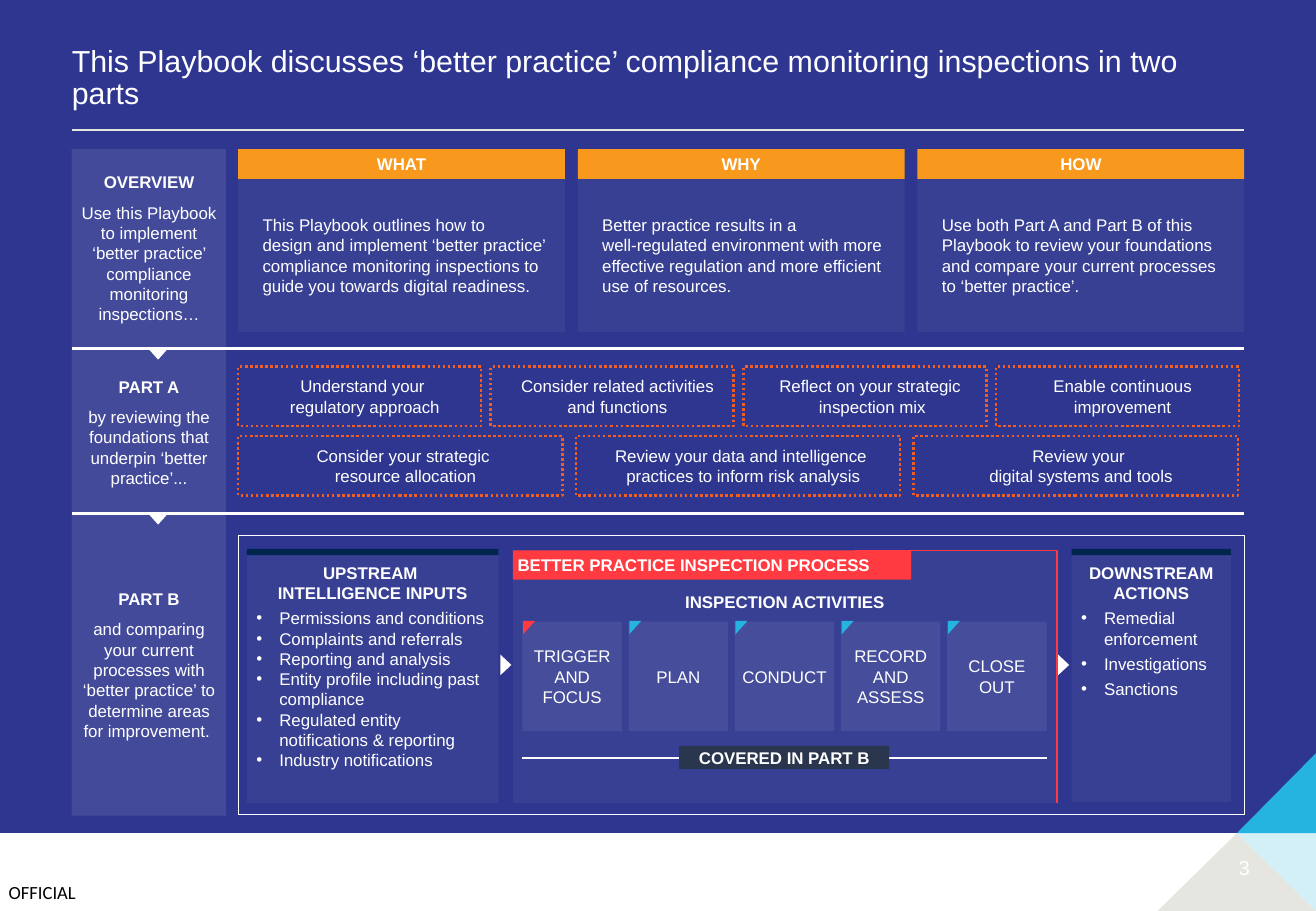
from copy import deepcopy
from dataclasses import dataclass

from lxml import etree
from pptx import Presentation
from pptx.dml.color import RGBColor
from pptx.enum.dml import MSO_LINE
from pptx.enum.shapes import MSO_CONNECTOR, MSO_SHAPE
from pptx.enum.text import MSO_ANCHOR, MSO_AUTO_SIZE, PP_ALIGN
from pptx.oxml.ns import qn
from pptx.util import Cm, Pt

RECTANGLE, TRIANGLE, CORNER = MSO_SHAPE.RECTANGLE, MSO_SHAPE.ISOSCELES_TRIANGLE, MSO_SHAPE.RIGHT_TRIANGLE
STRAIGHT, DOTTED = MSO_CONNECTOR.STRAIGHT, MSO_LINE.ROUND_DOT
LEFT, CENTER, RIGHT = PP_ALIGN.LEFT, PP_ALIGN.CENTER, PP_ALIGN.RIGHT
TOP, MIDDLE, BOTTOM = MSO_ANCHOR.TOP, MSO_ANCHOR.MIDDLE, MSO_ANCHOR.BOTTOM

WHITE, NAVY, ORANGE, RED, CYAN = "FFFFFF", "2E368F", "F8981D", "FF3A40", "25B3E0"
DOT_ORANGE, DARK_BLUE, SLATE, GREY, PALE_BLUE = "F25E21", "00264D", "2A354E", "E6E6E1", "D3F0F9"

SLIDE_WIDTH, SLIDE_HEIGHT, NAVY_HEIGHT = 27.51, 19.05, 17.42
MARGIN, RIGHT_EDGE, CONTENT_LEFT = 1.5, 26.01, 4.98
WIDE_INSETS = (0.51, 0.13, 0.3, 0.13)
SIDE_INSETS = (0.2, 0.13, 0.2, 0.13)
LIST_INSETS = (0.2, 0.15, 0.2, 0.13)
TIGHT_INSETS = (0.1, 0.1, 0.1, 0.1)


@dataclass
class Box:
    left: float
    top: float
    width: float
    height: float

    def lengths(self) -> tuple:
        return Cm(self.left), Cm(self.top), Cm(self.width), Cm(self.height)


@dataclass
class Section:
    heading: str
    text: str
    top: float
    height: float


@dataclass
class ListPanel:
    placeholder: int
    heading: str
    items: list[str]
    box: Box
    item_space: float


CARDS = [
    ("WHAT", "This Playbook outlines how to \ndesign and implement ‘better practice’ compliance monitoring "
             "inspections to guide you towards digital readiness."),
    ("WHY", "Better practice results in a \nwell-regulated environment with more effective regulation "
            "and more efficient use of resources."),
    ("HOW", "Use both Part A and Part B of this Playbook to review your foundations and compare your "
            "current processes to ‘better practice’."),
]
SECTIONS = [
    Section("OVERVIEW", "Use this Playbook to implement ‘better practice’ compliance monitoring inspections…", 3.12, 4.14),
    Section("PART A", "by reviewing the foundations that underpin ‘better practice’...", 7.32, 3.43),
    Section("PART B", "and comparing your current processes with ‘better practice’ to determine areas "
                      "for improvement. ", 10.74, 6.32),
]
FOUR_FOUNDATIONS = ["Understand your \nregulatory approach", "Consider related activities and functions",
                    "Reflect on your strategic\n inspection mix", "Enable continuous improvement"]
THREE_FOUNDATIONS = ["Consider your strategic \nresource allocation",
                     "Review your data and intelligence \npractices to inform risk analysis",
                     "Review your \ndigital systems and tools"]
STEPS = ["TRIGGER AND FOCUS", "PLAN", "CONDUCT", "RECORD AND ASSESS", "CLOSE OUT"]
LIST_PANELS = [
    ListPanel(1, "UPSTREAM \nINTELLIGENCE INPUTS",
              ["Permissions and conditions", "Complaints and referrals", "Reporting and analysis",
               "Entity profile including past compliance", "Regulated entity notifications & reporting",
               "Industry notifications"], Box(5.16, 11.61, 5.26, 5.18), 0),
    ListPanel(2, "DOWNSTREAM ACTIONS", ["Remedial enforcement", "Investigations", "Sanctions"],
              Box(22.4, 11.61, 3.33, 5.16), 3),
]


def color(value: str) -> RGBColor:
    return RGBColor.from_string(value)


def paint(shape, fill: str | None, line: str | None = None, weight: float = 1, opacity: int = 100) -> None:
    shape.shadow.inherit = False
    if fill:
        shape.fill.solid()
        shape.fill.fore_color.rgb = color(fill)
        if opacity < 100:
            tint = shape.fill._xPr.find(".//" + qn("a:srgbClr"))
            etree.SubElement(tint, qn("a:alpha"), val=str(opacity * 1000))
    else:
        shape.fill.background()
    if line:
        shape.line.color.rgb = color(line)
        shape.line.width = Pt(weight)
    else:
        shape.line.fill.background()


def add_shape(box: Box, fill: str | None, kind=RECTANGLE, rotation: int = 0, **style):
    shape = slide.shapes.add_shape(kind, *box.lengths())
    shape.rotation = rotation
    paint(shape, fill, **style)
    return shape


def add_line(left: float, right: float, y: float, line: str, weight: float) -> None:
    connector = slide.shapes.add_connector(STRAIGHT, Cm(left), Cm(y), Cm(right), Cm(y))
    connector.line.color.rgb = color(line)
    connector.line.width = Pt(weight)
    etree.SubElement(connector._element.spPr, qn("a:effectLst"))


def add_outline(points: list[tuple[float, float]], closed: bool, fill: str | None, line: str | None = None) -> None:
    start, *others = [(Cm(x), Cm(y)) for x, y in points]
    builder = slide.shapes.build_freeform(*start)
    builder.add_line_segments(others, close=closed)
    paint(builder.convert_to_shape(), fill, line)


def format_frame(shape, anchor=MIDDLE, insets=TIGHT_INSETS, wrap=True, fit=MSO_AUTO_SIZE.NONE) -> None:
    frame = shape.text_frame
    frame.word_wrap, frame.auto_size, frame.vertical_anchor = wrap, fit, anchor
    frame.margin_left, frame.margin_top, frame.margin_right, frame.margin_bottom = map(Cm, insets)


def write(shape, text: str, *, size: float = 10, font: str = "Arial", ink: str = WHITE, bold: bool = False,
          align=CENTER, after: float = 0, spacing: float = 1, bullet: bool = False) -> None:
    """Add one formatted paragraph, filling the empty first one if there is one."""
    frame = shape.text_frame
    paragraph = frame.add_paragraph() if frame.text else frame.paragraphs[0]
    paragraph.text = text
    paragraph.alignment, paragraph.line_spacing = align, spacing
    paragraph.space_before, paragraph.space_after = Pt(0), Pt(after)
    properties = paragraph._p.get_or_add_pPr()
    indent = Cm(0.48) if bullet else 0
    properties.set("marL", str(indent))
    properties.set("indent", str(-indent))
    if bullet:
        bullet_color = etree.SubElement(properties, qn("a:buClr"))
        etree.SubElement(bullet_color, qn("a:srgbClr"), val=WHITE)
        etree.SubElement(properties, qn("a:buFont"), typeface="Arial")
        etree.SubElement(properties, qn("a:buChar"), char="•")
    else:
        etree.SubElement(properties, qn("a:buNone"))
    for run in paragraph.runs:
        run.font.size, run.font.name, run.font.bold = Pt(size), font, bold
        run.font.color.rgb = color(ink)
    for line_break in paragraph._p.findall(qn("a:br")):
        line_break.insert(0, deepcopy(paragraph.runs[0]._r.rPr))


def add_label(box: Box, text: str, fill: str | None, insets=TIGHT_INSETS, opacity: int = 100, **text_format):
    shape = add_shape(box, fill, opacity=opacity)
    format_frame(shape, insets=insets)
    write(shape, text, **text_format)
    return shape


def place_placeholder(index: int, box: Box):
    """Move a placeholder to the box and in front of what is already drawn."""
    placeholder = slide.placeholders[index]
    placeholder.left, placeholder.top, placeholder.width, placeholder.height = box.lengths()
    slide.shapes._spTree.append(placeholder._element)
    return placeholder


def add_text(box: Box, text: str, **text_format) -> None:
    text_box = slide.shapes.add_textbox(*box.lengths())
    format_frame(text_box, insets=(0, 0, 0, 0), wrap=False)
    write(text_box, text, **text_format)


def add_foundations(texts: list[str], top: float, width: float, gap: float) -> None:
    for column, text in enumerate(texts):
        box = Box(CONTENT_LEFT + column * (width + gap), top, width, 1.24)
        shape = add_label(box, text, None, WIDE_INSETS)
        paint(shape, None, DOT_ORANGE, 1.5)
        shape.line.dash_style = DOTTED


presentation = Presentation()
presentation.slide_width, presentation.slide_height = Cm(SLIDE_WIDTH), Cm(SLIDE_HEIGHT)
slide = presentation.slides.add_slide(presentation.slide_layouts[3])

add_shape(Box(0, 0, SLIDE_WIDTH, NAVY_HEIGHT), NAVY)
add_line(MARGIN, RIGHT_EDGE, 2.72, GREY, 1.25)
peak, edge = (25.86, NAVY_HEIGHT), (SLIDE_WIDTH, NAVY_HEIGHT)
bottom_corner = (SLIDE_WIDTH, SLIDE_HEIGHT)
add_outline([peak, (24.2, SLIDE_HEIGHT), bottom_corner], True, GREY)
add_outline([edge, peak, bottom_corner], True, PALE_BLUE)
add_outline([(SLIDE_WIDTH, 15.75), peak, edge], True, CYAN)
add_text(Box(0.18, 18.42, 1.5, 0.46), "OFFICIAL", size=11, font="Calibri", ink="000000", align=LEFT)
add_text(Box(25.13, 17.9, 1, 0.5), "3", size=12, align=RIGHT)

title = place_placeholder(0, Box(MARGIN, 1.52, 24.51, 0.94))
format_frame(title, BOTTOM, (0, 0.13, 0, 0.13), fit=MSO_AUTO_SIZE.SHAPE_TO_FIT_TEXT)
write(title, "This Playbook discusses ‘better practice’ compliance monitoring inspections in two parts",
      size=18, align=LEFT, spacing=0.9)

for y in (7.29, 10.74):
    add_line(MARGIN, RIGHT_EDGE, y, WHITE, 1.5)
    add_shape(Box(3.1, y, 0.41, 0.23), WHITE, TRIANGLE, 180)

for column, (heading, text) in enumerate(CARDS):
    left = CONTENT_LEFT + column * 7.1
    add_label(Box(left, 3.74, 6.83, 3.2), text, WHITE, WIDE_INSETS, opacity=5, align=LEFT, after=6)
    add_label(Box(left, 3.12, 6.83, 0.62), heading, ORANGE, bold=True, after=6)

for section in SECTIONS:
    sidebar = add_label(Box(MARGIN, section.top, 3.23, section.height), section.heading, WHITE,
                        SIDE_INSETS, opacity=10, bold=True, after=6)
    write(sidebar, section.text, after=6)

add_foundations(FOUR_FOUNDATIONS, 7.67, 5.08, 0.2)
add_foundations(THREE_FOUNDATIONS, 9.12, 6.78, 0.28)

add_shape(Box(CONTENT_LEFT, 11.2, 21.03, 5.84), None, line=WHITE, weight=0.75)
for panel in LIST_PANELS:
    body = place_placeholder(panel.placeholder, panel.box)
    paint(body, WHITE, opacity=5)
    format_frame(body, TOP, LIST_INSETS)
    write(body, panel.heading, bold=True, after=3)
    for item in panel.items:
        write(body, item, align=LEFT, after=panel.item_space, bullet=True)
    add_shape(Box(panel.box.left, 11.48, panel.box.width, 0.13), DARK_BLUE)
for left in (10.36, 22.02):
    add_shape(Box(left, 13.79, 0.43, 0.23), WHITE, TRIANGLE, 90)

add_shape(Box(10.72, 11.51, 11.4, 5.28), WHITE, opacity=5)
add_label(Box(10.72, 11.51, 8.33, 0.61), "BETTER PRACTICE INSPECTION PROCESS", RED, bold=True, align=LEFT, after=3)
add_outline([(17.88, 11.51), (22.1, 11.51), (22.1, 16.79)], False, None, RED)
add_label(Box(10.92, 12.27, 10.97, 0.61), "INSPECTION ACTIVITIES", None, bold=True, after=3)
for column, step in enumerate(STEPS):
    left = 10.92 + column * 2.22
    add_label(Box(left, 13, 2.08, 2.29), step, WHITE, opacity=7, after=3)
    add_shape(Box(left, 13, 0.28, 0.25), CYAN if column else RED, CORNER, 90)
add_line(10.92, 21.89, 15.85, WHITE, 1)
add_label(Box(14.2, 15.6, 4.39, 0.48), "COVERED IN PART B", SLATE, bold=True, after=3)

presentation.save("out.pptx")
